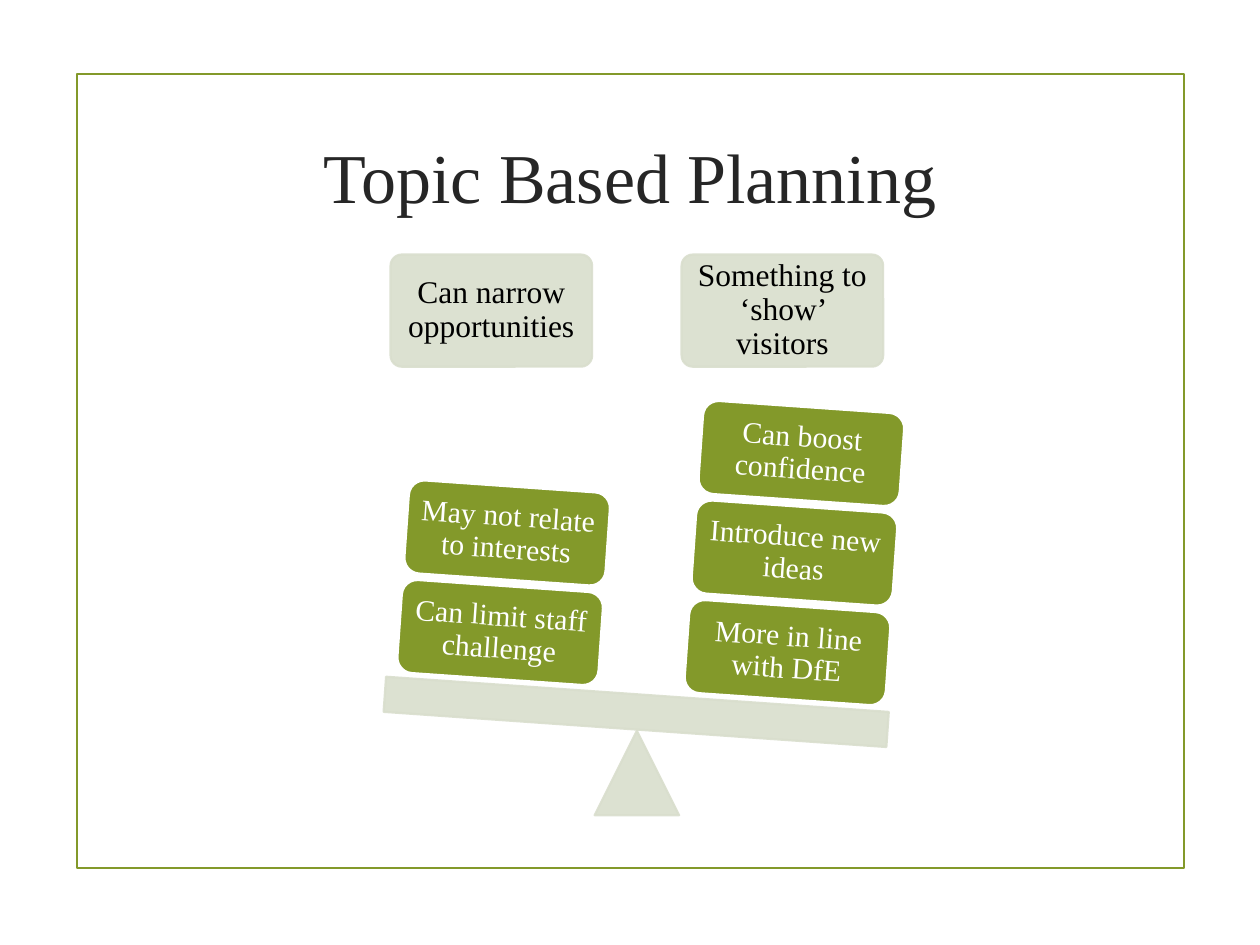
from math import radians, tan

from lxml import etree
from pptx import Presentation
from pptx.dml.color import RGBColor
from pptx.enum.shapes import MSO_SHAPE
from pptx.enum.text import MSO_ANCHOR, PP_ALIGN
from pptx.oxml.ns import qn
from pptx.util import Inches, Pt

RECT, ROUNDED = MSO_SHAPE.RECTANGLE, MSO_SHAPE.ROUNDED_RECTANGLE
TRIANGLE = MSO_SHAPE.ISOSCELES_TRIANGLE
CENTER, MIDDLE = PP_ALIGN.CENTER, MSO_ANCHOR.MIDDLE

# Content: each side of the scale has a heading and weights, bottom to top
TITLE = "Topic Based Planning"
SIDES = [
    ("Can narrow opportunities",
     ["Can limit staff challenge", "May not relate to interests"]),
    ("Something to ‘show’ visitors",
     ["More in line with DfE", "Introduce new ideas", "Can boost confidence"]),
]

FONT = "Times New Roman"
GREEN, PALE, WHITE, BLACK, DARK = "83992A", "D9DECD", "FFFFFF", "000000", "262626"

# Layout in inches
SLIDE_W, SLIDE_H = 10, 7.5
CARD_W, HEADING_H, WEIGHT_H = 1.6, 0.89, 0.74
HEADING_LEFT, HEADING_TOP, HEADING_STEP = 3.1, 2.02, 2.31
WEIGHT_LEFT, WEIGHT_TOP, WEIGHT_STEP = 3.17, 4.65, 2.28
TILT = 4
SLOPE = tan(radians(TILT))
LEVEL_H = 0.79


def color(hex_code):
    return RGBColor.from_string(hex_code)


def write(frame, text, size, ink, inset=0.07, spacing=0.9):
    frame.word_wrap = True
    frame.vertical_anchor = MIDDLE
    frame.margin_left = frame.margin_right = Inches(inset)
    frame.margin_top = frame.margin_bottom = Inches(inset)
    paragraph = frame.paragraphs[0]
    paragraph.alignment = CENTER
    paragraph.line_spacing = spacing
    run = paragraph.add_run()
    run.text = text
    run.font.name, run.font.size = FONT, Pt(size)
    run.font.color.rgb = color(ink)


def draw(slide, kind, left, top, width, height, fill=None, line=None, opacity=100, tilt=0):
    shape = slide.shapes.add_shape(
        kind, Inches(left), Inches(top), Inches(width), Inches(height))
    shape.shadow.inherit = False
    shape.rotation = tilt
    if fill:
        shape.fill.solid()
        shape.fill.fore_color.rgb = color(fill)
    else:
        shape.fill.background()
    shape.line.color.rgb = color(line or fill)
    shape.line.width = Pt(1.25)
    if opacity < 100:
        for tone in shape.fill._xPr.iter(qn("a:srgbClr")):
            etree.SubElement(tone, qn("a:alpha"), val=str(opacity * 1000))
    return shape


def main():
    prs = Presentation()
    prs.slide_width, prs.slide_height = Inches(SLIDE_W), Inches(SLIDE_H)
    slide = prs.slides.add_slide(prs.slide_layouts[5])

    # Title and page frame
    title = slide.shapes.title
    title.left, title.top = Inches(0.75), Inches(0.77)
    title.width, title.height = Inches(8.5), Inches(1.25)
    write(title.text_frame, TITLE, 40, DARK, inset=0.05, spacing=1)
    draw(slide, RECT, 0.61, 0.59, 8.79, 6.3, line=GREEN)

    # Fulcrum and tilted beam
    draw(slide, TRIANGLE, 4.72, 5.8, 0.67, 0.67, PALE, opacity=90)
    draw(slide, RECT, 3.05, 5.51, 4, 0.28, PALE, opacity=90, tilt=TILT)

    # Headings, with the weights stacked square to the beam
    for side, (heading, weights) in enumerate(SIDES):
        card = draw(slide, ROUNDED, HEADING_LEFT + side * HEADING_STEP, HEADING_TOP,
                    CARD_W, HEADING_H, PALE, opacity=90)
        card.adjustments[0] = 0.1
        write(card.text_frame, heading, 18, BLACK)
        for level, weight in enumerate(weights):
            rise = level * LEVEL_H
            shift = side * WEIGHT_STEP
            block = draw(slide, ROUNDED, WEIGHT_LEFT + shift + rise * SLOPE,
                         WEIGHT_TOP + shift * SLOPE - rise,
                         CARD_W, WEIGHT_H, GREEN, line=WHITE, tilt=TILT)
            write(block.text_frame, weight, 17, WHITE)

    prs.save("out.pptx")


if __name__ == "__main__":
    main()
